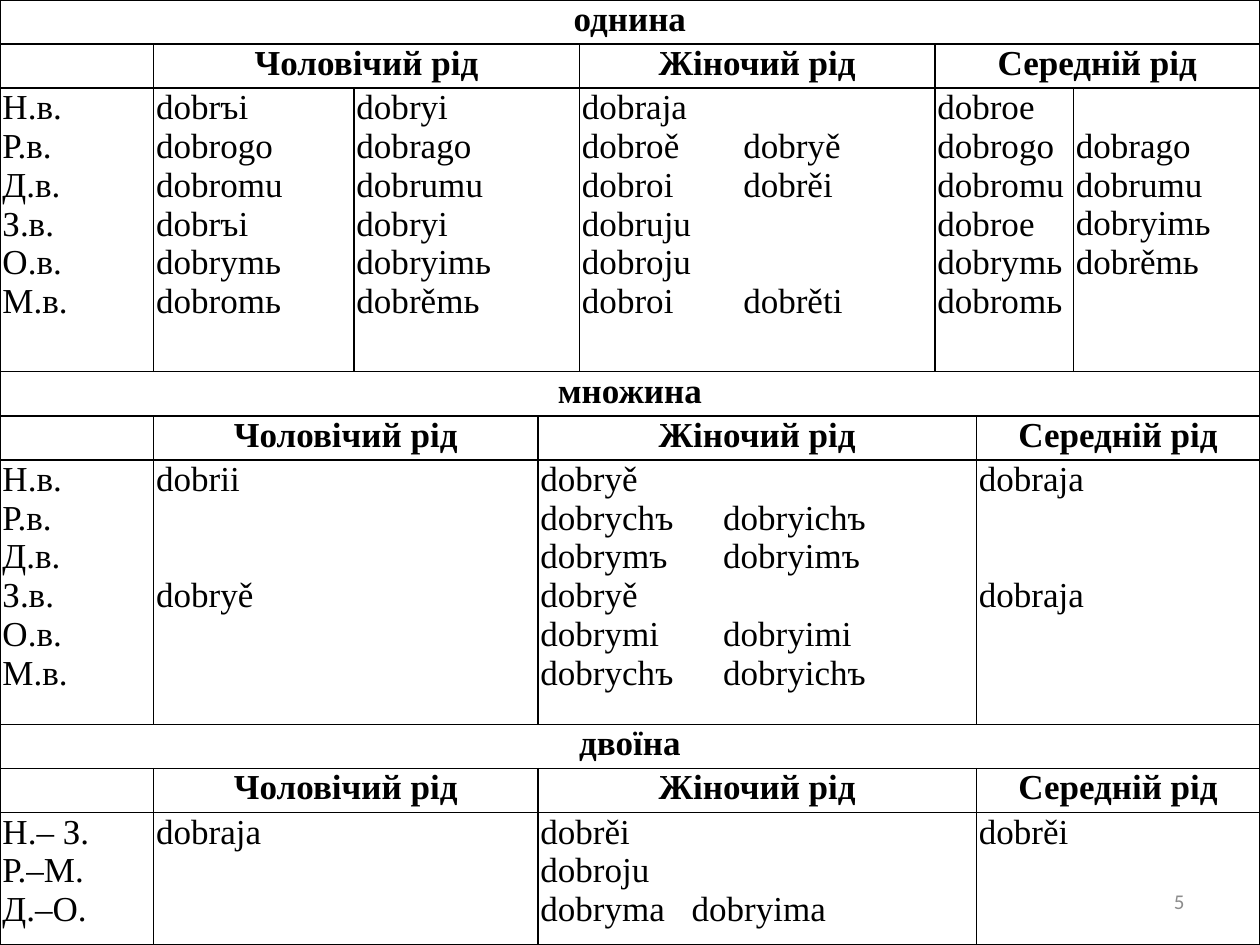
import itertools
from dataclasses import dataclass

import pptx
import pptx.dml.color
import pptx.enum.text
import pptx.oxml.ns
import pptx.util
from lxml import etree

Inches, Pt = pptx.util.Inches, pptx.util.Pt
Align = pptx.enum.text.PP_ALIGN
Anchor = pptx.enum.text.MSO_ANCHOR
qn = pptx.oxml.ns.qn

COLORS = {"ink": "000000", "paper": "FFFFFF", "muted": "8C8C8C"}
SERIF = "Times New Roman"
SIZE = 20
LINE = 22.15  # height of one line of forms, in points
WIDE, HIGH = 10, 7.5
COLS = [1.22, 1.59, 1.46, 0.33, 2.82, 0.33, 0.77, 1.48]
HEAD = 0.35
CASES = "Н.в.\nР.в.\nД.в.\nЗ.в.\nО.в.\nМ.в."
GENDERS = ["Чоловічий рід", "Жіночий рід", "Середній рід"]


@dataclass
class Forms:
    span: int
    text: str
    stop: float = 0  # tab stop of the second form


@dataclass
class Block:
    title: str
    height: float
    heads: list[int]  # columns under each gender
    forms: list[Forms]


BLOCKS = [
    Block("однина", 2.25, [3, 1, 3], [
        Forms(1, CASES),
        Forms(1, "dobrъi\ndobrogo\ndobromu\ndobrъi\ndobrymь\ndobromь"),
        Forms(2, "dobryi\ndobrago\ndobrumu\ndobryi\ndobryimь\ndobrěmь"),
        Forms(1, "dobraja\ndobroě\tdobryě\ndobroi\tdobrěi\ndobruju\n"
                 "dobroju\ndobroi\tdobrěti", 1.28),
        Forms(2, "dobroe\ndobrogo\ndobromu\ndobroe\ndobrymь\ndobromь"),
        Forms(1, "\ndobrago\ndobrumu\ndobryimь\ndobrěmь"),
    ]),
    Block("множина", 2.1, [2, 3, 2], [
        Forms(1, CASES),
        Forms(2, "dobrii\n\n\ndobryě"),
        Forms(3, "dobryě\ndobrychъ\tdobryichъ\ndobrymъ\tdobryimъ\ndobryě\n"
                 "dobrymi\tdobryimi\ndobrychъ\tdobryichъ", 1.45),
        Forms(2, "dobraja\n\n\ndobraja"),
    ]),
    Block("двоїна", 1.05, [2, 3, 2], [
        Forms(1, "Н.– З.\nР.–М.\nД.–О."),
        Forms(2, "dobraja"),
        Forms(3, "dobrěi\ndobroju\ndobryma\tdobryima", 1.2),
        Forms(2, "dobrěi"),
    ]),
]


def rgb(name: str) -> pptx.dml.color.RGBColor:
    return pptx.dml.color.RGBColor.from_string(COLORS[name])


def write(frame, text: str, *, size=SIZE, font=SERIF, color="ink",
          bold=False, align=Align.JUSTIFY, stop=0.0) -> None:
    """Write lines; an empty line becomes space above the next one."""
    skip, first = 0, True
    for line in text.split("\n"):
        if not line:
            skip += 1
            continue
        para = frame.paragraphs[0] if first else frame.add_paragraph()
        para.alignment = align
        if skip and first:
            frame.margin_top = Pt(skip * LINE)
        elif skip:
            para.space_before = Pt(skip * LINE)
        if stop:
            tabs = etree.SubElement(para._p.get_or_add_pPr(), qn("a:tabLst"))
            etree.SubElement(tabs, qn("a:tab"), pos=str(Inches(stop)), algn="l")
        run = para.add_run()
        run.text = line
        run.font.size, run.font.name, run.font.bold = Pt(size), font, bold
        run.font.color.rgb = rgb(color)
        skip, first = 0, False


def dress(cell) -> None:
    """Set margins, black borders and a white fill."""
    cell.margin_left = cell.margin_right = Inches(0.02)
    cell.margin_top = cell.margin_bottom = 0
    props = cell._tc.get_or_add_tcPr()
    for side in ("lnL", "lnR", "lnT", "lnB"):
        edge = etree.SubElement(props, qn(f"a:{side}"), w=str(Pt(1)))
        fill = etree.SubElement(edge, qn("a:solidFill"))
        etree.SubElement(fill, qn("a:srgbClr"), val=COLORS["ink"])
    cell.fill.solid()
    cell.fill.fore_color.rgb = rgb("paper")


def place(grid, row: int, items: list[Forms], **style) -> None:
    """Fill a row from the left, merging each item's columns."""
    ends = itertools.accumulate(item.span for item in items)
    for item, end in zip(items, ends):
        cell = grid.cell(row, end - item.span)
        if item.span > 1:
            cell.merge(grid.cell(row, end - 1))
        target = cell.text_frame
        if item.text.startswith("\n"):
            cell.margin_top = Pt(LINE)
        write(target, item.text.lstrip("\n"), stop=item.stop, **style)


def main() -> None:
    deck = pptx.Presentation()
    deck.slide_width, deck.slide_height = Inches(WIDE), Inches(HIGH)
    slide = deck.slides.add_slide(deck.slide_layouts[6])

    # Table grid
    rows = [h for b in BLOCKS for h in (HEAD, HEAD, b.height)]
    grid = slide.shapes.add_table(len(rows), len(COLS), 0, 0,
                                  Inches(WIDE), Inches(HIGH)).table
    grid.first_row = grid.horz_banding = False
    for col, width in zip(grid.columns, COLS):
        col.width = Inches(width)
    for row, height in zip(grid.rows, rows):
        row.height = Inches(height)
    for cell in grid.iter_cells():
        dress(cell)

    # One block of three rows for each number
    for top, block in zip(itertools.count(0, 3), BLOCKS):
        heads = [Forms(1, "")] + [Forms(n, g)
                                  for n, g in zip(block.heads, GENDERS)]
        title = [Forms(len(COLS), block.title)]
        place(grid, top, title, bold=True, align=Align.CENTER)
        place(grid, top + 1, heads, bold=True, align=Align.CENTER)
        place(grid, top + 2, block.forms)

    # Page number
    box = slide.shapes.add_textbox(Inches(7.17), Inches(6.95),
                                   Inches(2.33), Inches(0.4))
    box.text_frame.word_wrap = True
    box.text_frame.vertical_anchor = Anchor.MIDDLE
    write(box.text_frame, "5", size=12, font="Calibri", color="muted",
          align=Align.RIGHT)

    deck.save("out.pptx")


if __name__ == "__main__":
    main()
